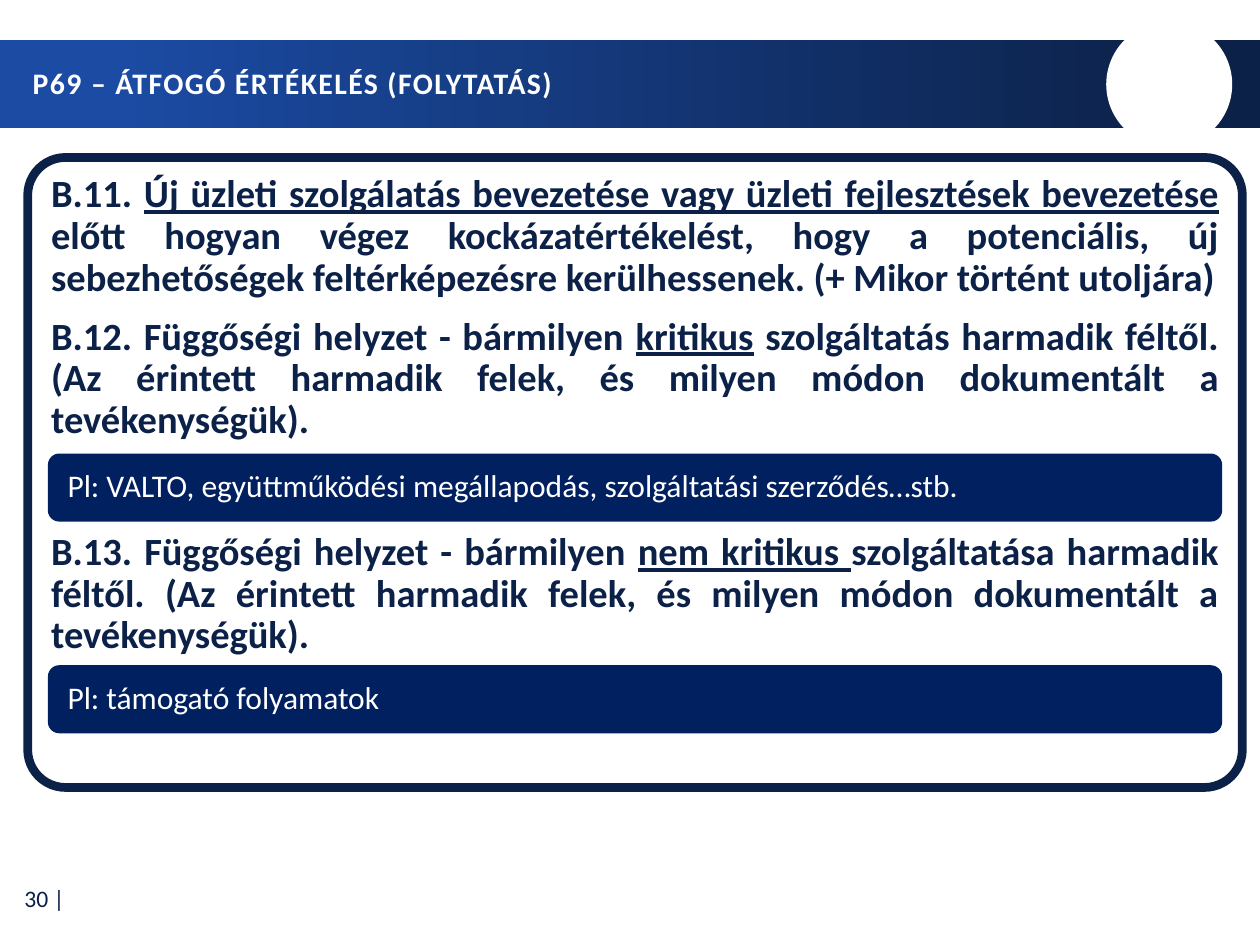
"""Build the slide on the comprehensive assessment, items B.11 to B.13."""
from pptx import Presentation
from pptx.dml.color import RGBColor
from pptx.enum.shapes import MSO_SHAPE
from pptx.enum.text import MSO_ANCHOR, MSO_AUTO_SIZE, PP_ALIGN
from pptx.util import Inches, Pt

NAVY, BLUE, DEEP, WHITE = "0C2148", "1B4BA3", "002060", "FFFFFF"


def paint(target, color):
    """Set a colour format to a hex value."""
    target.rgb = RGBColor.from_string(color)


def style(run, size, color, bold=False):
    """Format one run of text."""
    run.font.name = "Calibri"
    run.font.size = Pt(size)
    run.font.bold = bold
    paint(run.font.color, color)


prs = Presentation()
prs.slide_width, prs.slide_height = Inches(10), Inches(7.5)
slide = prs.slides.add_slide(prs.slide_layouts[5])
shapes = slide.shapes

band = shapes.add_shape(MSO_SHAPE.RECTANGLE, 0, Inches(0.32), Inches(10), Inches(0.7))
band.shadow.inherit = False
band.line.fill.background()
band.fill.gradient()
band.fill.gradient_angle = 0
for stop, spot, color in zip(band.fill.gradient_stops, (0.09, 0.95), (BLUE, NAVY)):
    stop.position = spot
    paint(stop.color, color)

disc = shapes.add_shape(MSO_SHAPE.OVAL, Inches(8.78), Inches(0.17), Inches(1), Inches(1))
disc.shadow.inherit = False
disc.line.fill.background()
disc.fill.solid()
paint(disc.fill.fore_color, WHITE)

title = shapes.title
shapes._spTree.append(title._element)
title.left, title.top = Inches(0.16), Inches(0.34)
title.width, title.height = Inches(8.9), Inches(0.67)
frame = title.text_frame
frame.text = "P69 – ÁTFOGÓ ÉRTÉKELÉS (FOLYTATÁS)"
frame.auto_size = MSO_AUTO_SIZE.NONE
frame.vertical_anchor = MSO_ANCHOR.MIDDLE
para = frame.paragraphs[0]
para.alignment = PP_ALIGN.LEFT
para.line_spacing = 0.9
style(para.runs[0], 17, WHITE, True)
para.runs[0]._r.get_or_add_rPr().set("spc", "80")

panel = shapes.add_shape(
    MSO_SHAPE.ROUNDED_RECTANGLE, Inches(0.22), Inches(1.25), Inches(9.64), Inches(5))
panel.adjustments[0] = 0.06
panel.shadow.inherit = False
panel.fill.background()
panel.line.width = Pt(5)
paint(panel.line.color, NAVY)
frame = panel.text_frame
frame.word_wrap = True
frame.vertical_anchor = MSO_ANCHOR.TOP

items = [
    (0, ["B.11. ",
         "Új üzleti szolgálatás bevezetése vagy üzleti fejlesztések bevezetése ",
         "előtt hogyan végez kockázatértékelést, hogy a potenciális, új sebezhetőségek "
         "feltérképezésre kerülhessenek. (+ Mikor történt utoljára)"]),
    (10, ["B.12. Függőségi helyzet - bármilyen ",
          "kritikus",
          " szolgáltatás harmadik féltől. (Az érintett harmadik felek, és milyen módon "
          "dokumentált a tevékenységük)."]),
    (52, ["B.13. Függőségi helyzet - bármilyen ",
          "nem kritikus ",
          "szolgáltatása harmadik féltől. (Az érintett harmadik felek, és milyen módon "
          "dokumentált a tevékenységük)."]),
]
for row, (gap, parts) in enumerate(items):
    para = frame.add_paragraph() if row else frame.paragraphs[0]
    para.alignment = PP_ALIGN.JUSTIFY
    para.line_spacing = 0.9
    para.space_before = Pt(gap)
    for spot, part in enumerate(parts):
        run = para.add_run()
        run.text = part
        style(run, 22, NAVY, True)
        run.font.underline = spot == 1

notes = [
    (3.6, "Pl: VALTO, együttműködési megállapodás, szolgáltatási szerződés…stb."),
    (5.28, "Pl: támogató folyamatok"),
]
for top, text in notes:
    pill = shapes.add_shape(
        MSO_SHAPE.ROUNDED_RECTANGLE, Inches(0.38), Inches(top), Inches(9.32), Inches(0.54))
    pill.shadow.inherit = False
    pill.line.fill.background()
    pill.fill.solid()
    paint(pill.fill.fore_color, DEEP)
    frame = pill.text_frame
    frame.text = text
    frame.word_wrap = True
    frame.margin_left = Inches(0.13)
    frame.vertical_anchor = MSO_ANCHOR.MIDDLE
    para = frame.paragraphs[0]
    para.alignment = PP_ALIGN.LEFT
    para.line_spacing = 0.9
    style(para.runs[0], 18, WHITE)

page = shapes.add_textbox(Inches(0.01), Inches(6.94), Inches(0.6), Inches(0.37))
frame = page.text_frame
frame.text = "30 |"
frame.word_wrap = True
frame.vertical_anchor = MSO_ANCHOR.MIDDLE
frame.paragraphs[0].alignment = PP_ALIGN.RIGHT
style(frame.paragraphs[0].runs[0], 13.5, NAVY)

prs.save("out.pptx")
